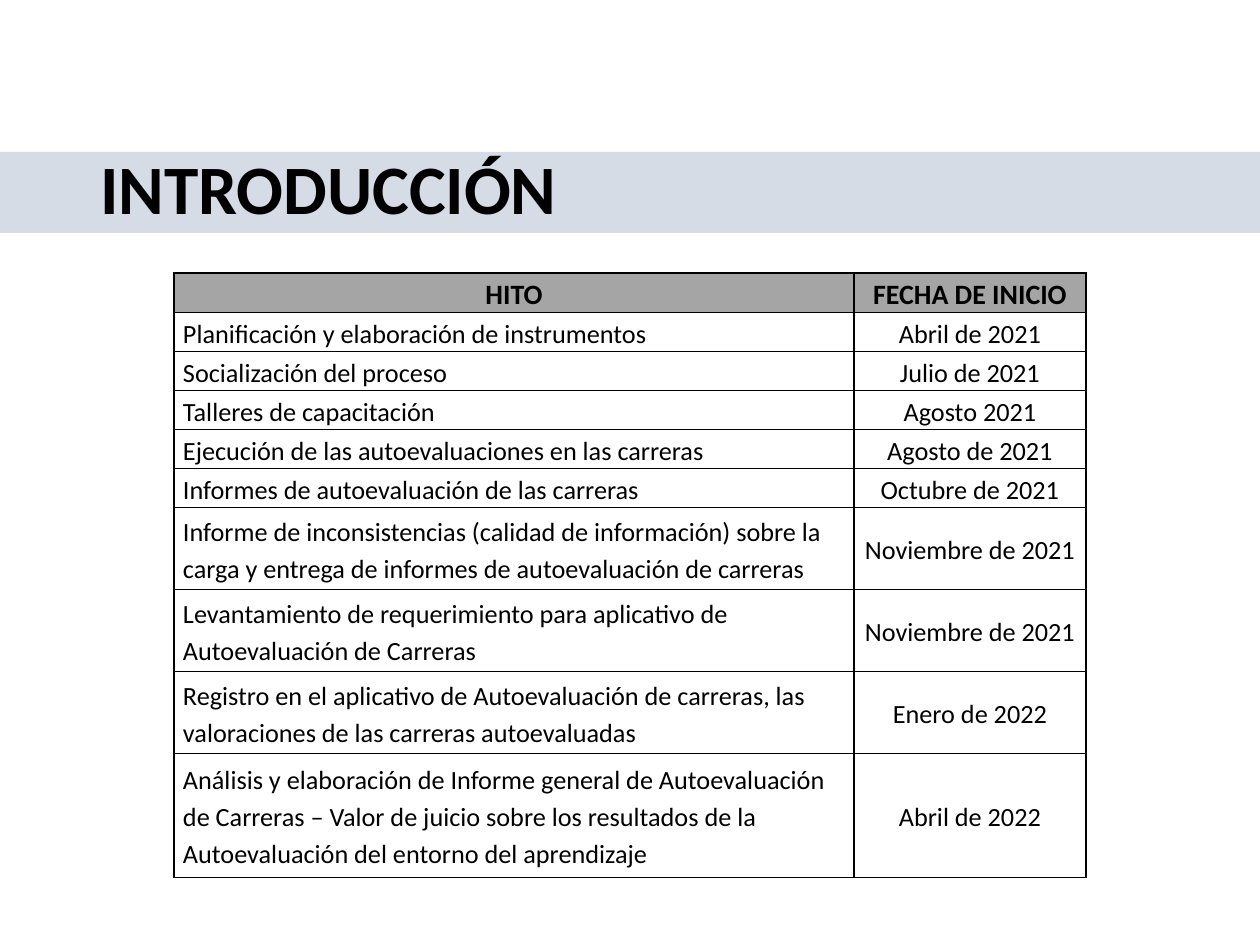
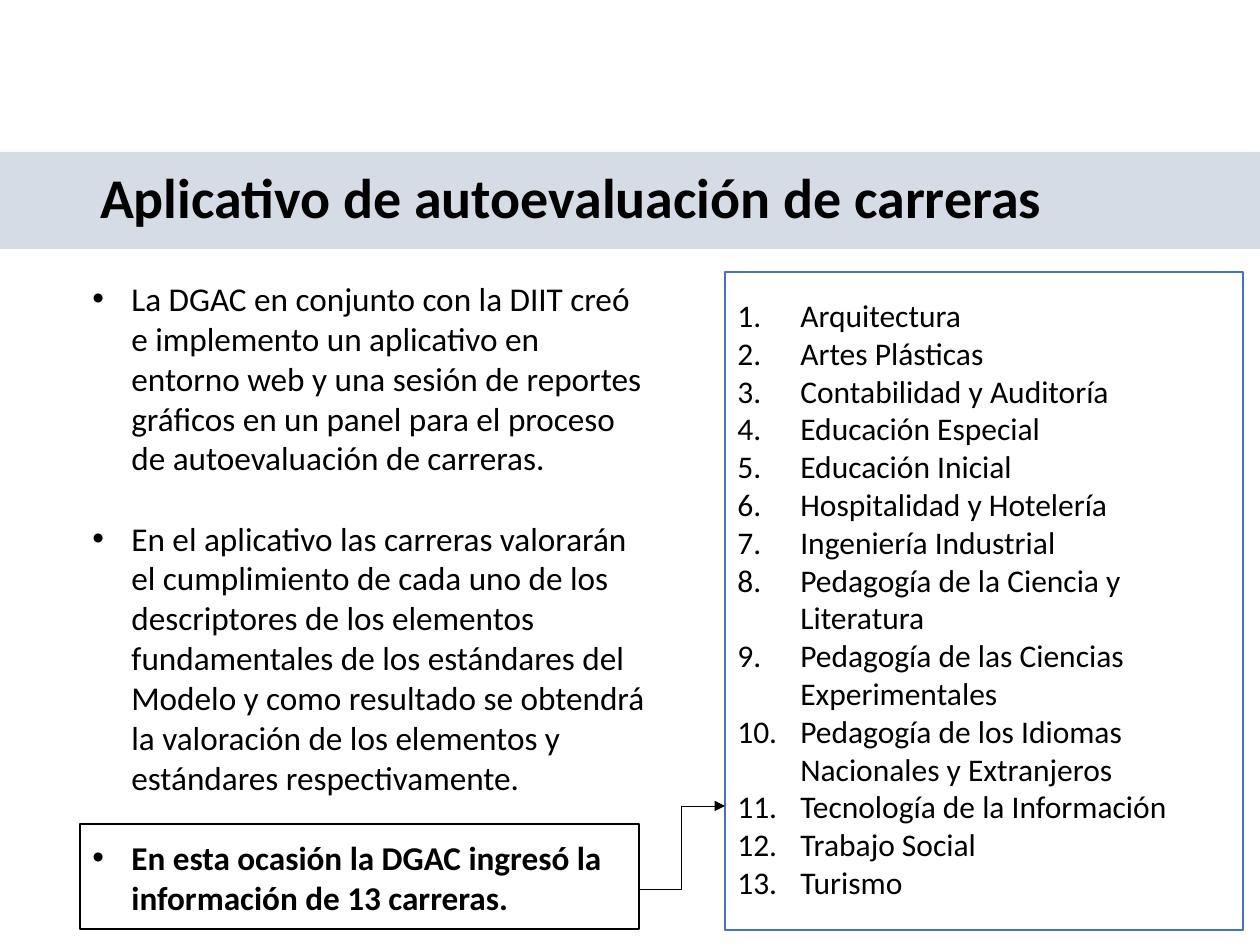
from dataclasses import dataclass

from lxml.etree import SubElement
from pptx import Presentation
from pptx.dml.color import RGBColor
from pptx.enum.shapes import MSO_CONNECTOR, MSO_SHAPE
from pptx.enum.text import MSO_ANCHOR, MSO_AUTO_SIZE, PP_ALIGN
from pptx.oxml.ns import qn
from pptx.util import Emu, Pt

PIXEL = 914400 / 126


@dataclass(frozen=True)
class Theme:
    """Colours, font and type sizes shared by the slides."""

    font: str = "Calibri"
    ink: str = "000000"
    paper: str = "FFFFFF"
    band: str = "D6DCE5"
    header: str = "A5A5A5"
    accent: str = "4472C4"
    title_large: float = 39.6
    title: float = 32
    body: float = 19
    listing: float = 18
    table_header: float = 16
    table_body: float = 15


THEME = Theme()

MILESTONES = [
    ("Planificación y elaboración de instrumentos", "Abril de 2021"),
    ("Socialización del proceso", "Julio de 2021"),
    ("Talleres de capacitación", "Agosto 2021"),
    ("Ejecución de las autoevaluaciones en las carreras", "Agosto de 2021"),
    ("Informes de autoevaluación de las carreras", "Octubre de 2021"),
    ("Informe de inconsistencias (calidad de información) sobre la carga y entrega "
     "de informes de autoevaluación de carreras", "Noviembre de 2021"),
    ("Levantamiento de requerimiento para aplicativo de Autoevaluación de Carreras",
     "Noviembre de 2021"),
    ("Registro en el aplicativo de Autoevaluación de carreras, las valoraciones de "
     "las carreras autoevaluadas", "Enero de 2022"),
    ("Análisis y elaboración de Informe general de Autoevaluación de Carreras – Valor "
     "de juicio sobre los resultados de la Autoevaluación del entorno del aprendizaje",
     "Abril de 2022"),
]
ROW_HEIGHTS = [39] * 6 + [82] * 3 + [124]
COLUMN_WIDTHS = [680, 232]

EXPLANATIONS = [
    "La DGAC en conjunto con la DIIT creó e implemento un aplicativo en entorno web y una "
    "sesión de reportes gráficos en un panel para el proceso de autoevaluación de carreras.",
    "En el aplicativo las carreras valorarán el cumplimiento de cada uno de los "
    "descriptores de los elementos fundamentales de los estándares del Modelo y como "
    "resultado se obtendrá la valoración de los elementos y estándares respectivamente.",
    "En esta ocasión la DGAC ingresó la información de 13 carreras.",
]
DEGREES = [
    "Arquitectura",
    "Artes Plásticas",
    "Contabilidad y Auditoría",
    "Educación Especial",
    "Educación Inicial",
    "Hospitalidad y Hotelería",
    "Ingeniería Industrial",
    "Pedagogía de la Ciencia y Literatura",
    "Pedagogía de las Ciencias Experimentales",
    "Pedagogía de los Idiomas Nacionales y Extranjeros",
    "Tecnología de la Información",
    "Trabajo Social",
    "Turismo",
]


def px(*lengths):
    """Turn pixel lengths into a list of EMU lengths."""
    return [Emu(round(length * PIXEL)) for length in lengths]


def color(code):
    """Return the colour of a hexadecimal code."""
    return RGBColor.from_string(code)


def style_font(paragraph, size, bold=False):
    """Set the shared font on a whole paragraph."""
    font = paragraph.font
    font.name, font.size, font.bold = THEME.font, Pt(size), bold
    font.color.rgb = color(THEME.ink)


def set_fill(target, code):
    """Fill a shape or a cell with one colour."""
    target.fill.solid()
    target.fill.fore_color.rgb = color(code)


def set_line(shape, code, width):
    """Set the line colour and width of a shape."""
    shape.line.color.rgb = color(code)
    shape.line.width = Pt(width)


def add_titled_slide(presentation, text, size, band_height):
    """Add a slide whose title lies on a full-width band."""
    slide = presentation.slides.add_slide(presentation.slide_layouts[5])
    title = slide.shapes.title
    title.left, title.top, title.width, title.height = px(0, 152, 1260, band_height)
    set_fill(title, THEME.band)
    frame = title.text_frame
    frame.text = text
    frame.auto_size = MSO_AUTO_SIZE.NONE
    frame.vertical_anchor = MSO_ANCHOR.MIDDLE
    [frame.margin_left] = px(100)
    paragraph = frame.paragraphs[0]
    paragraph.alignment = PP_ALIGN.LEFT
    paragraph.line_spacing = 0.9
    style_font(paragraph, size, bold=True)
    return slide


def add_cell_borders(cell):
    """Draw a thin line on every side of a cell."""
    properties = cell._tc.get_or_add_tcPr()
    for side in ("a:lnL", "a:lnR", "a:lnT", "a:lnB"):
        line = SubElement(properties, qn(side), w=str(Pt(1)))
        fill = SubElement(line, qn("a:solidFill"))
        SubElement(fill, qn("a:srgbClr"), val=THEME.ink)


def fill_cell(cell, text, is_header, is_centered):
    """Write and format one table cell."""
    add_cell_borders(cell)
    set_fill(cell, THEME.header if is_header else THEME.paper)
    cell.margin_left, cell.margin_right = px(9, 9)
    cell.margin_top = cell.margin_bottom = 0
    cell.vertical_anchor = MSO_ANCHOR.TOP if is_header else MSO_ANCHOR.MIDDLE
    cell.text = text
    paragraph = cell.text_frame.paragraphs[0]
    paragraph.alignment = PP_ALIGN.CENTER if is_centered else PP_ALIGN.LEFT
    paragraph.line_spacing = 1.15
    style_font(paragraph, THEME.table_header if is_header else THEME.table_body, is_header)


def add_milestone_table(slide):
    """Add the table of milestones and starting dates."""
    rows = [("HITO", "FECHA DE INICIO")] + MILESTONES
    box = px(174, 273, sum(COLUMN_WIDTHS), sum(ROW_HEIGHTS))
    table = slide.shapes.add_table(len(rows), len(COLUMN_WIDTHS), *box).table
    table.first_row = table.horz_banding = False
    for column, width in zip(table.columns, px(*COLUMN_WIDTHS)):
        column.width = width
    for row, height in zip(table.rows, px(*ROW_HEIGHTS)):
        row.height = height
    for row_index, texts in enumerate(rows):
        for column_index, text in enumerate(texts):
            is_header = row_index == 0
            fill_cell(table.cell(row_index, column_index), text, is_header,
                      is_header or column_index == 1)


def fill_list(frame, items, size, indent, gap=0, numbered=False):
    """Write a bulleted or numbered list with a hanging indent."""
    frame.word_wrap = True
    frame.vertical_anchor = MSO_ANCHOR.TOP
    [hanging] = px(indent)
    for index, item in enumerate(items):
        paragraph = frame.add_paragraph() if index else frame.paragraphs[0]
        paragraph.text = item
        paragraph.alignment = PP_ALIGN.LEFT
        properties = paragraph._p.get_or_add_pPr()
        properties.set("marL", str(hanging))
        properties.set("indent", str(-hanging))
        if numbered:
            SubElement(properties, qn("a:buAutoNum"), type="arabicPeriod")
        else:
            SubElement(properties, qn("a:buFont"), typeface="Arial")
            SubElement(properties, qn("a:buChar"), char="•")
        if index and gap:
            paragraph.space_before = Pt(gap)
        style_font(paragraph, size)


def add_rectangle(slide, box, line_color, fill_color=None):
    """Add an outlined rectangle, filled if a colour is given."""
    shape = slide.shapes.add_shape(MSO_SHAPE.RECTANGLE, *px(*box))
    shape.shadow.inherit = False
    if fill_color:
        set_fill(shape, fill_color)
    else:
        shape.fill.background()
    set_line(shape, line_color, 1)
    return shape


def add_elbow_arrow(slide, *ends):
    """Add a bent connector with an arrowhead at its end."""
    connector = slide.shapes.add_connector(MSO_CONNECTOR.ELBOW, *px(*ends))
    set_line(connector, THEME.ink, 0.5)
    SubElement(connector.line._get_or_add_ln(), qn("a:tailEnd"), type="triangle")
    SubElement(connector._element.spPr, qn("a:effectLst"))


def build_introduction(presentation):
    """Build the slide with the milestones."""
    slide = add_titled_slide(presentation, "INTRODUCCIÓN", THEME.title_large, 81)
    add_milestone_table(slide)


def build_application(presentation):
    """Build the slide about the application and its degrees."""
    slide = add_titled_slide(presentation, "Aplicativo de autoevaluación de carreras",
                             THEME.title, 97)
    explanation = slide.shapes.add_textbox(*px(80, 272, 586, 658)).text_frame
    fill_list(explanation, EXPLANATIONS, THEME.body, indent=39, gap=23)
    explanation.paragraphs[-1].font.bold = True
    degrees = add_rectangle(slide, (725, 272, 518, 658), THEME.accent, THEME.paper).text_frame
    [degrees.margin_top] = px(24)
    fill_list(degrees, DEGREES, THEME.listing, indent=63, numbered=True)
    add_elbow_arrow(slide, 639, 890, 725, 806)
    add_rectangle(slide, (80, 824, 559, 105), THEME.ink)


def main():
    """Build and save the presentation."""
    presentation = Presentation()
    presentation.slide_width, presentation.slide_height = px(1260, 945)
    build_introduction(presentation)
    build_application(presentation)
    presentation.save("out.pptx")


if __name__ == "__main__":
    main()
